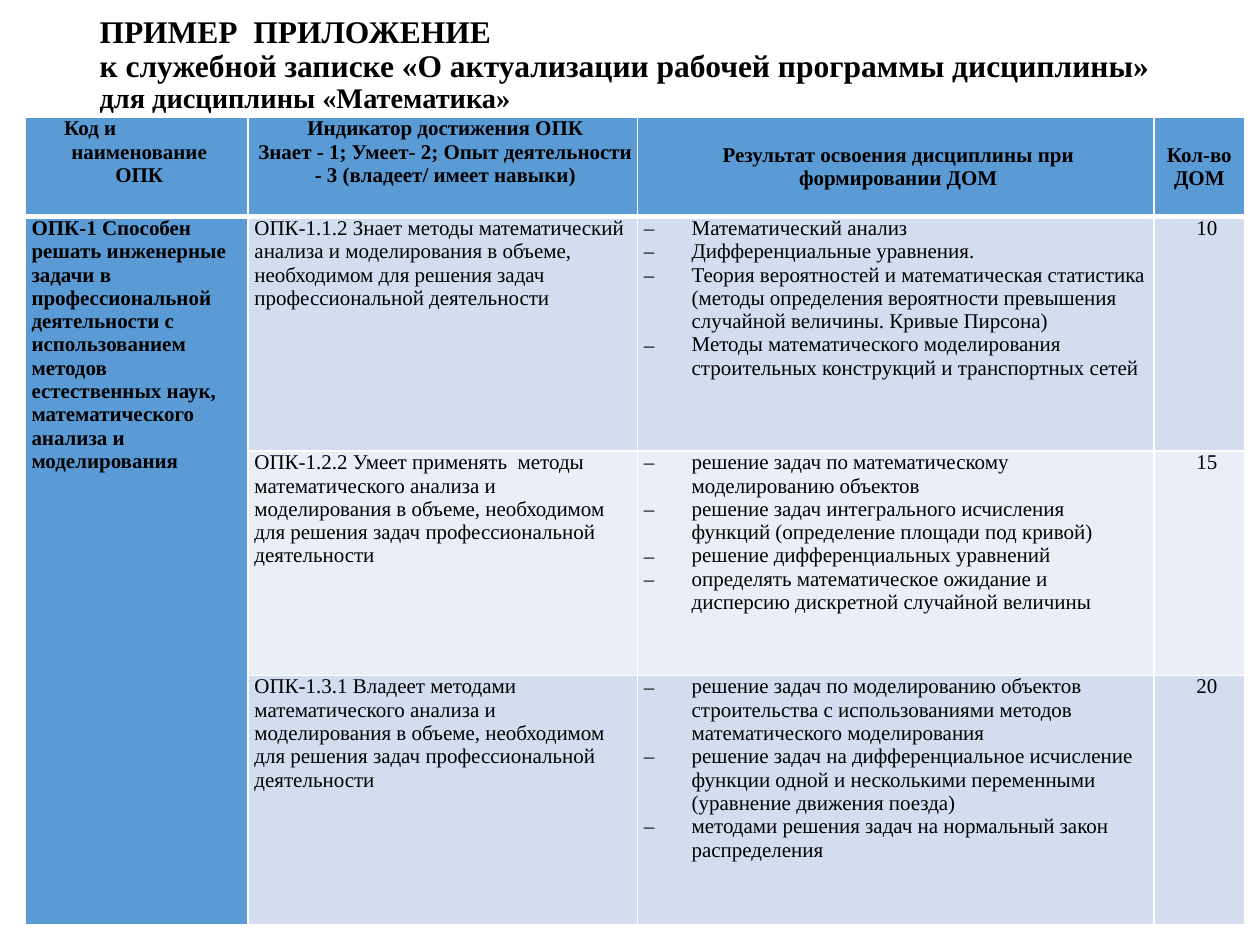
from lxml.etree import SubElement
from pptx import Presentation
from pptx.dml.color import RGBColor
from pptx.enum.text import MSO_ANCHOR as Anchor, MSO_AUTO_SIZE as AutoSize, PP_ALIGN as Align
from pptx.oxml.ns import qn
from pptx.util import Inches, Pt

FONT = "Times New Roman"
BLACK = RGBColor(0x00, 0x00, 0x00)
WHITE = RGBColor(0xFF, 0xFF, 0xFF)
BLUE = RGBColor(0x5B, 0x9B, 0xD5)
PALE = RGBColor(0xD2, 0xDE, 0xEF)
PALEST = RGBColor(0xEA, 0xEF, 0xF7)

COLUMNS = (1.77, 3.09, 4.1, 0.72)
ROWS = (0.79, 1.86, 1.78, 1.98)

HEADING = (
    ("ПРИМЕР  ПРИЛОЖЕНИЕ", 18),
    ("к служебной записке «О актуализации рабочей программы дисциплины»", 18),
    ("для дисциплины «Математика»", 16.2),
)
COMPETENCE = (
    "ОПК-1 Способен решать инженерные задачи в профессиональной деятельности "
    "с использованием методов естественных наук, математического анализа и моделирования"
)
SCOPE = "анализа и моделирования в объеме, необходимом для решения задач профессиональной деятельности"
OUTCOMES = (
    ("ОПК-1.1.2 Знает методы математический " + SCOPE, (
        "Математический анализ",
        "Дифференциальные уравнения.",
        "Теория вероятностей и математическая статистика (методы определения "
        "вероятности превышения случайной величины. Кривые Пирсона)",
        "Методы математического моделирования строительных конструкций и транспортных сетей",
    ), "10", PALE),
    ("ОПК-1.2.2 Умеет применять  методы математического " + SCOPE, (
        "решение задач по математическому моделированию объектов",
        "решение задач интегрального исчисления функций (определение площади под кривой)",
        "решение дифференциальных уравнений",
        "определять математическое ожидание и дисперсию дискретной случайной величины",
    ), "15", PALEST),
    ("ОПК-1.3.1 Владеет методами математического " + SCOPE, (
        "решение задач по моделированию объектов строительства с использованиями "
        "методов математического моделирования",
        "решение задач на дифференциальное исчисление функции одной и несколькими "
        "переменными (уравнение движения поезда)",
        "методами решения задач на нормальный закон распределения",
    ), "20", PALE),
)


def style_run(run, size, bold):
    run.font.name = FONT
    run.font.size = Pt(size)
    run.font.bold = bold
    run.font.color.rgb = BLACK


def write(frame, lines, size=12, bold=False, align=Align.LEFT, margin=0, indent=0, bullet=None):
    for number, line in enumerate(lines):
        paragraph = frame.add_paragraph() if number else frame.paragraphs[0]
        paragraph.alignment = align
        properties = paragraph._p.get_or_add_pPr()
        properties.set("marL", str(Inches(margin)))
        properties.set("indent", str(Inches(indent)))
        if bullet:
            SubElement(properties, qn("a:buFont"), typeface=FONT)
            SubElement(properties, qn("a:buChar"), char=bullet)
        run = paragraph.add_run()
        run.text = line
        style_run(run, size, bold)


def dress(cell, fill, side=0.05, anchor=Anchor.TOP, bottom_line=1):
    cell.margin_left = cell.margin_right = Inches(side)
    cell.margin_top = cell.margin_bottom = 0
    cell.vertical_anchor = anchor
    properties = cell._tc.get_or_add_tcPr()
    for edge, width in (("lnL", 1), ("lnR", 1), ("lnT", 1), ("lnB", bottom_line)):
        line = SubElement(properties, qn("a:" + edge), w=str(Pt(width)))
        SubElement(SubElement(line, qn("a:solidFill")), qn("a:srgbClr"), val=str(WHITE))
    cell.fill.solid()
    cell.fill.fore_color.rgb = fill


def place_heading(slide, left, top, width, height):
    title = slide.shapes.title
    title.left, title.top, title.width, title.height = map(Inches, (left, top, width, height))
    frame = title.text_frame
    frame.word_wrap = True
    frame.auto_size = AutoSize.NONE
    frame.vertical_anchor = Anchor.MIDDLE
    frame.margin_bottom = Inches(0.34)
    paragraph = frame.paragraphs[0]
    paragraph.alignment = Align.LEFT
    paragraph.line_spacing = 0.9
    for number, (line, size) in enumerate(HEADING):
        if number:
            paragraph.add_line_break()
        run = paragraph.add_run()
        run.text = line
        style_run(run, size, True)


def fill_header(table):
    code, indicator, result, count = (table.cell(0, column) for column in range(len(COLUMNS)))
    for cell in (code, indicator):
        dress(cell, BLUE, side=0.03, bottom_line=3)
    for cell in (result, count):
        dress(cell, BLUE, anchor=Anchor.MIDDLE, bottom_line=3)
    centred = {"bold": True, "align": Align.CENTER}
    write(code.text_frame, ("Код и", "наименование", "ОПК"), margin=0.04, **centred)
    first = code.text_frame.paragraphs[0]
    first.alignment = Align.LEFT
    first._p.pPr.set("marL", str(Inches(0.28)))
    write(indicator.text_frame, (
        "Индикатор достижения ОПК",
        "Знает - 1; Умеет- 2; Опыт деятельности - 3 (владеет/ имеет навыки)",
    ), margin=0.04, **centred)
    write(result.text_frame, ("Результат освоения дисциплины при формировании ДОМ",),
          margin=0.04, **centred)
    write(count.text_frame, ("Кол-во", "ДОМ"), **centred)


def fill_outcomes(table):
    for row, (indicator, results, count, fill) in enumerate(OUTCOMES, 1):
        for column in range(len(COLUMNS)):
            dress(table.cell(row, column), fill if column else BLUE)
        write(table.cell(row, 1).text_frame, (indicator,))
        write(table.cell(row, 2).text_frame, results, margin=0.38, indent=-0.38, bullet="‒")
        write(table.cell(row, 3).text_frame, (count,), align=Align.CENTER, margin=0.12)
    competence = table.cell(1, 0)
    competence.merge(table.cell(len(OUTCOMES), 0))
    write(competence.text_frame, (COMPETENCE,), bold=True)


def place_table(slide, left, top):
    box = map(Inches, (left, top, sum(COLUMNS), sum(ROWS)))
    table = slide.shapes.add_table(len(ROWS), len(COLUMNS), *box).table
    for column, width in zip(table.columns, COLUMNS):
        column.width = Inches(width)
    for row, height in zip(table.rows, ROWS):
        row.height = Inches(height)
    fill_header(table)
    fill_outcomes(table)


def main():
    deck = Presentation()
    deck.slide_width, deck.slide_height = Inches(10), Inches(7.5)
    slide = deck.slides.add_slide(deck.slide_layouts[5])
    place_heading(slide, 0.69, 0.4, 8.62, 0.53)
    place_table(slide, 0.2, 0.93)
    deck.save("out.pptx")


if __name__ == "__main__":
    main()
